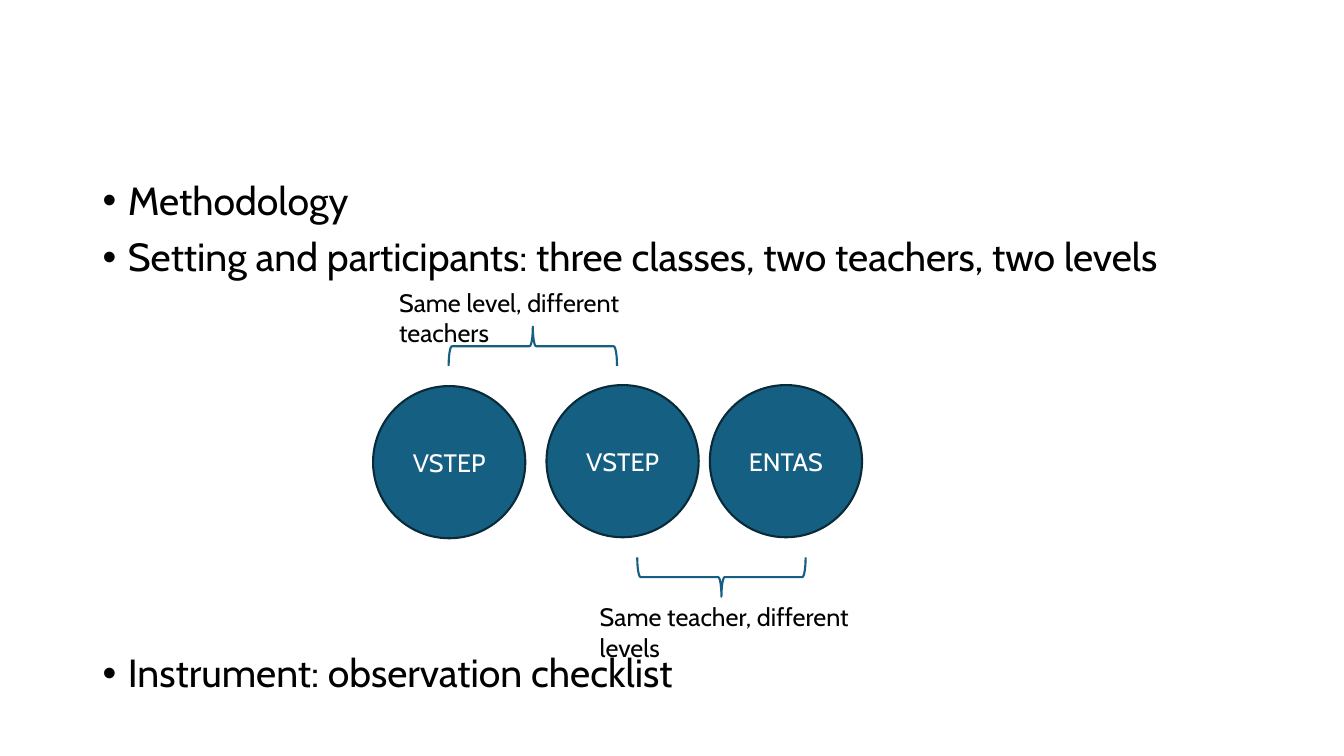
from dataclasses import dataclass

from lxml.etree import SubElement
from pptx import Presentation
from pptx.dml.color import RGBColor
from pptx.enum.shapes import MSO_SHAPE as Shape
from pptx.enum.text import MSO_ANCHOR as Anchor, PP_ALIGN as Align
from pptx.oxml.ns import qn
from pptx.util import Inches, Pt

# Text, space before in points
BULLETS = [
    ("Methodology", 0),
    ("Setting and participants: three classes, two teachers, two levels", 10),
    ("Instrument: observation checklist", 267),
]
# Label, left, top
CLASSES = [("VSTEP", 3.7, 3.83), ("VSTEP", 5.42, 3.82), ("ENTAS", 7.04, 3.82)]
# Caption, its left, top and width, then brace left, top and rotation
COMPARISONS = [
    ("Same level, different teachers", (3.86, 2.8, 2.97), (5.09, 2.6, 270)),
    ("Same teacher, different levels", (5.85, 5.92, 2.86), (6.96, 4.89, 90)),
]
BODY = (0.92, 1.75, 11.5, 5.57)
CIRCLE_SIZE = 1.51
BRACE_WIDTH, BRACE_LENGTH = 0.39, 1.67
CAPTION_HEIGHT = 0.34
BULLET_INDENT = 0.25


@dataclass(frozen=True)
class Theme:
    font: str = "Cabin"
    text: RGBColor = RGBColor(0, 0, 0)
    light: RGBColor = RGBColor(255, 255, 255)
    accent: RGBColor = RGBColor(0x15, 0x60, 0x82)
    outline: RGBColor = RGBColor(0x09, 0x2A, 0x39)
    body_size: int = 28
    label_size: int = 18
    line_width: float = 1.5


THEME = Theme()


def style_text(paragraph, size, color):
    paragraph.font.name = THEME.font
    paragraph.font.size = Pt(size)
    paragraph.font.color.rgb = color


def add_bullet(paragraph):
    properties = paragraph._p.get_or_add_pPr()
    properties.set("marL", str(Inches(BULLET_INDENT)))
    properties.set("indent", str(-Inches(BULLET_INDENT)))
    SubElement(properties, qn("a:buFont")).set("typeface", "Arial")
    SubElement(properties, qn("a:buChar")).set("char", "•")


def add_text_box(slide, box):
    text_frame = slide.shapes.add_textbox(*map(Inches, box)).text_frame
    text_frame.word_wrap = True
    return text_frame


def add_outlined_shape(slide, kind, box, line_color):
    shape = slide.shapes.add_shape(kind, *map(Inches, box))
    shape.shadow.inherit = False
    shape.line.color.rgb = line_color
    shape.line.width = Pt(THEME.line_width)
    return shape


def add_body(slide):
    text_frame = add_text_box(slide, BODY)
    text_frame.text = "\n".join(text for text, _ in BULLETS)
    for paragraph, (_, space_before) in zip(text_frame.paragraphs, BULLETS):
        paragraph.line_spacing = 0.9
        paragraph.space_before = Pt(space_before)
        add_bullet(paragraph)
        style_text(paragraph, THEME.body_size, THEME.text)


def add_class(slide, label, left, top):
    box = (left, top, CIRCLE_SIZE, CIRCLE_SIZE)
    circle = add_outlined_shape(slide, Shape.OVAL, box, THEME.outline)
    circle.fill.solid()
    circle.fill.fore_color.rgb = THEME.accent
    text_frame = circle.text_frame
    text_frame.text = label
    text_frame.vertical_anchor = Anchor.MIDDLE
    paragraph = text_frame.paragraphs[0]
    paragraph.alignment = Align.CENTER
    style_text(paragraph, THEME.label_size, THEME.light)


def add_comparison(slide, caption, caption_place, brace_place):
    left, top, rotation = brace_place
    box = (left, top, BRACE_WIDTH, BRACE_LENGTH)
    brace = add_outlined_shape(slide, Shape.RIGHT_BRACE, box, THEME.accent)
    brace.fill.background()
    brace.rotation = rotation
    text_frame = add_text_box(slide, (*caption_place, CAPTION_HEIGHT))
    text_frame.text = caption
    style_text(text_frame.paragraphs[0], THEME.label_size, THEME.text)


def main():
    presentation = Presentation()
    presentation.slide_width = Inches(13.33)
    presentation.slide_height = Inches(7.5)
    slide = presentation.slides.add_slide(presentation.slide_layouts[6])
    add_body(slide)
    for class_group in CLASSES:
        add_class(slide, *class_group)
    for comparison in COMPARISONS:
        add_comparison(slide, *comparison)
    presentation.save("out.pptx")


if __name__ == "__main__":
    main()
